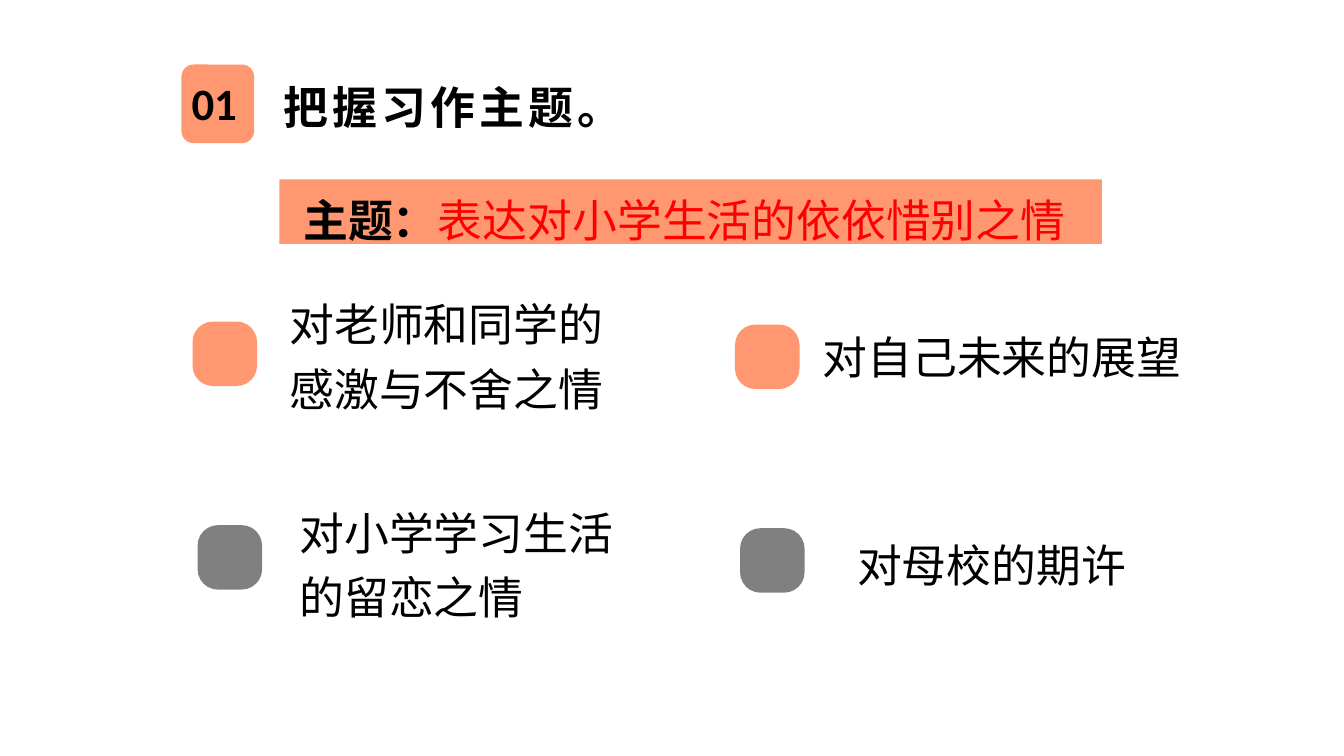
import pptx
import pptx.dml.color
import pptx.enum.shapes
import pptx.enum.text
import pptx.util
from lxml import etree

Inches = pptx.util.Inches
RGB = pptx.dml.color.RGBColor
SHAPE = pptx.enum.shapes.MSO_SHAPE
ALIGN = pptx.enum.text.PP_ALIGN

# Content
NUMBER = "01"
TITLE = "把握习作主题。"
THEME_LABEL = "主题："
THEME = "表达对小学生活的依依惜别之情"
# column, row, text, lines, left, width
POINTS = [
    (0, 0, "对老师和同学的感激与不舍之情", 2, 2.87, 3.31),
    (1, 0, "对自己未来的展望", 1, 8.16, 3.77),
    (0, 1, "对小学学习生活的留恋之情", 2, 2.97, 3.31),
    (1, 1, "对母校的期许", 1, 8.5, 3.31),
]

# Format
CORAL = RGB(0xFF, 0x97, 0x70)
GREY = RGB(0x80, 0x80, 0x80)
BLACK = RGB(0, 0, 0)
RED = RGB(0xFF, 0, 0)
SANS = "Noto Sans CJK SC"
MARKER = 0.64          # marker side
LINE = 0.64            # height of one text line
MARKER_X, MARKER_Y = 1.91, 3.19
COL_STEP, ROW_STEP = 5.38, 2.02
COL_DROP, ROW_SHIFT = 0.03, 0.05
TEXT_MID, TEXT_STEP = 3.48, 2.07

prs = pptx.Presentation()
prs.slide_width, prs.slide_height = Inches(13.33), Inches(7.5)
s = prs.slides.add_slide(prs.slide_layouts.get_by_name("Title Only"))


def place(sp, box):
    sp.left, sp.top, sp.width, sp.height = map(Inches, box)


def add_block(box, color, corner):
    sp = s.shapes.add_shape(SHAPE.ROUNDED_RECTANGLE, *map(Inches, box))
    sp.adjustments[0] = corner
    sp.fill.solid()
    sp.fill.fore_color.rgb = color
    sp.line.fill.background()
    sp.shadow.inherit = False
    return sp


def write(text, box=None, sp=None, font=SANS, color=BLACK, bold=False,
          align=ALIGN.LEFT, line=1.0, inset=True, wrap=True, spacing=0):
    """Add a run to sp, or to a new text box when sp is None."""
    if sp is None:
        sp = s.shapes.add_textbox(0, 0, 0, 0)
    if box:
        place(sp, box)
        tf = sp.text_frame
        tf.word_wrap = wrap
        tf.auto_size = pptx.enum.text.MSO_AUTO_SIZE.NONE
        tf.vertical_anchor = pptx.enum.text.MSO_ANCHOR.TOP
        if not inset:
            tf.margin_left = tf.margin_right = tf.margin_top = tf.margin_bottom = 0
        p = tf.paragraphs[0]
        p.alignment, p.line_spacing = align, line
    r = sp.text_frame.paragraphs[0].add_run()
    r.text = text
    r.font.size, r.font.name, r.font.bold = pptx.util.Pt(32), font, bold
    r.font.color.rgb = color
    rPr = r.font._element
    ea = etree.Element(pptx.oxml.ns.qn("a:ea"), typeface=SANS)
    rPr.find(pptx.oxml.ns.qn("a:latin")).addnext(ea)
    if spacing:
        rPr.set("spc", str(spacing * 100))
    return sp


# Heading with its number
write(TITLE, (2.71, 0.74, 3.6, 0.63), sp=s.shapes.title, font="Calibri",
      bold=True, spacing=3)
add_block((1.8, 0.64, 0.72, 0.78), CORAL, 0.1667)
write(NUMBER, (1.8, 0.7, 0.65, 0.64), font="Calibri", bold=True,
      align=ALIGN.CENTER, wrap=False)

# Four points, each with a marker
for col, row, text, lines, left, width in POINTS:
    x = MARKER_X + col * COL_STEP + row * ROW_SHIFT
    y = MARKER_Y + row * ROW_STEP + col * COL_DROP
    add_block((x, y, MARKER, MARKER), GREY if row else CORAL, 0.317)
    height = lines * LINE
    top = TEXT_MID + row * TEXT_STEP - height / 2
    write(text, (left, top, width, height), line=1.2, inset=False)

# Theme banner
add_block((2.77, 1.78, 8.16, 0.64), CORAL, 0)
banner = write(THEME_LABEL, (2.91, 1.7, 7.86, 0.79), bold=True,
               align=ALIGN.JUSTIFY, line=1.3)
write(THEME, sp=banner, color=RED)

prs.save("out.pptx")
